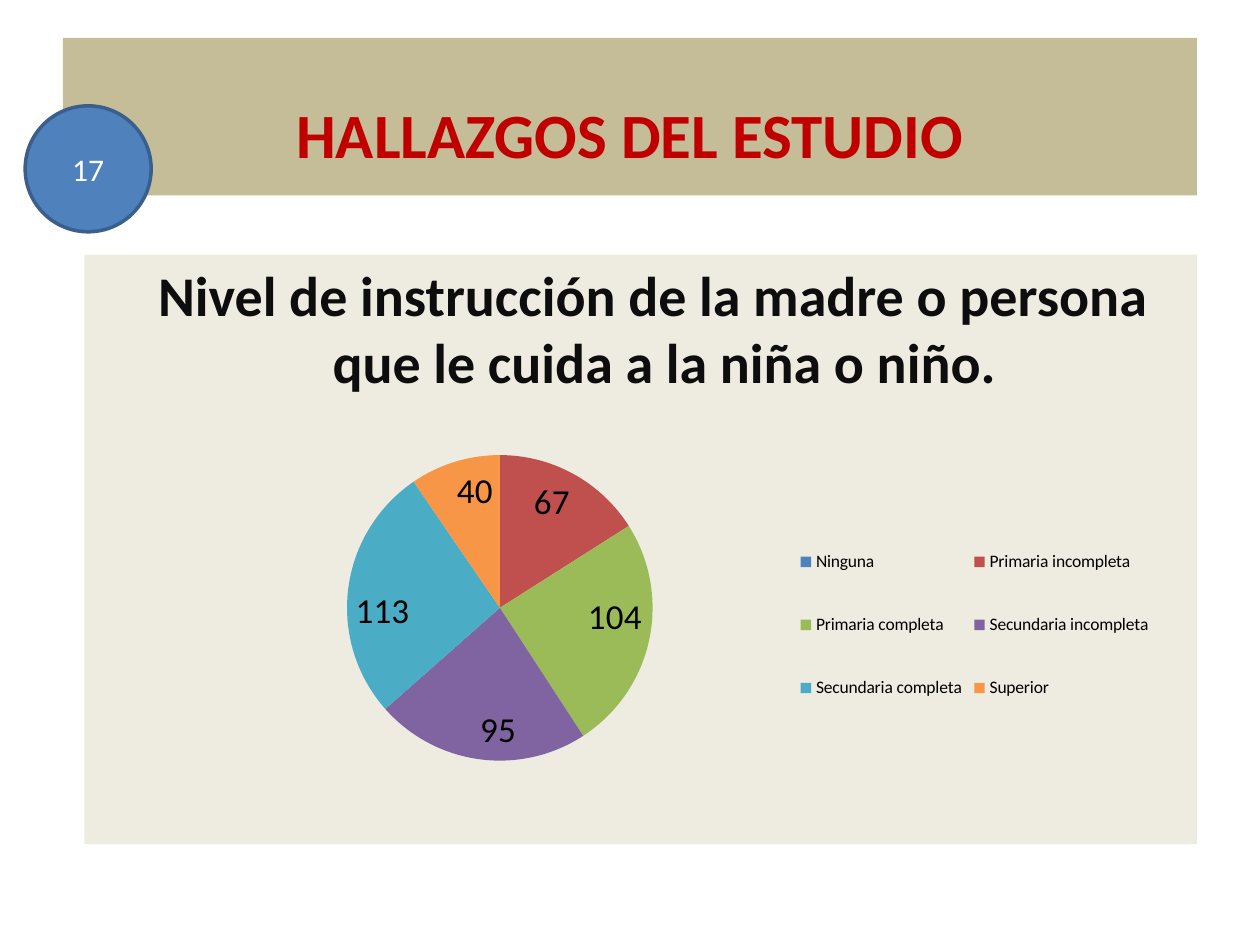
"""Build the slide on the schooling of mothers and carers."""
from dataclasses import dataclass
from typing import Optional

from lxml.etree import SubElement
from pptx import Presentation
from pptx.chart.data import CategoryChartData
from pptx.dml.color import RGBColor
from pptx.enum.chart import XL_CHART_TYPE, XL_LABEL_POSITION, XL_LEGEND_POSITION
from pptx.enum.shapes import MSO_SHAPE
from pptx.enum.text import MSO_ANCHOR, PP_ALIGN
from pptx.oxml.ns import qn
from pptx.util import Inches, Pt

FONT = "Calibri"
COLORS = {
    "banner": "C4BD97", "title": "C00000", "panel": "EEECE1", "heading": "0D0D0D",
    "badge": "4F81BD", "badge_line": "3A5F8C", "white": "FFFFFF", "black": "000000",
}


@dataclass
class Block:
    kind: MSO_SHAPE
    box: tuple[float, float, float, float]
    fill: str
    text: str
    size: float
    color: str
    bold: bool = False
    anchor: MSO_ANCHOR = MSO_ANCHOR.MIDDLE
    top: float = 0.05
    line: Optional[str] = None


@dataclass
class Level:
    name: str
    count: int
    color: str


BLOCKS = [
    Block(MSO_SHAPE.RECTANGLE, (0.5, 0.3, 9, 1.25), "banner",
          "HALLAZGOS DEL ESTUDIO", 36, "title", True, top=0.31),
    Block(MSO_SHAPE.OVAL, (0.2, 0.84, 1, 1), "badge", "17", 18, "white", line="badge_line"),
    Block(MSO_SHAPE.RECTANGLE, (0.67, 2.02, 8.83, 4.68), "panel",
          "Nivel de instrucción de la madre o persona que le cuida a la niña o niño.",
          32, "heading", True, MSO_ANCHOR.TOP),
]
LEVELS = [
    Level("Ninguna", 0, "4F81BD"),
    Level("Primaria incompleta", 67, "C0504D"),
    Level("Primaria completa", 104, "9BBB59"),
    Level("Secundaria incompleta", 95, "8064A2"),
    Level("Secundaria completa", 113, "4BACC6"),
    Level("Superior", 40, "F79646"),
]


def rgb(name: str) -> RGBColor:
    """Return the named colour."""
    return RGBColor.from_string(COLORS[name])


def add_block(s, block: Block):
    """Draw a filled shape with centred text."""
    sp = s.shapes.add_shape(block.kind, *map(Inches, block.box))
    sp.shadow.inherit = False
    sp.fill.solid()
    sp.fill.fore_color.rgb = rgb(block.fill)
    if block.line:
        sp.line.color.rgb = rgb(block.line)
        sp.line.width = Pt(2)
    else:
        sp.line.fill.background()
    tf = sp.text_frame
    tf.text = block.text
    tf.word_wrap = True
    tf.vertical_anchor = block.anchor
    tf.margin_top = Inches(block.top)
    p = tf.paragraphs[0]
    p.alignment = PP_ALIGN.CENTER
    font = p.runs[0].font
    font.name, font.size, font.bold = FONT, Pt(block.size), block.bold
    font.color.rgb = rgb(block.color)
    return sp


def set_indent(p, left: float, first: float) -> None:
    """Set the left margin and first-line indent of a paragraph."""
    pPr = p._p.get_or_add_pPr()
    pPr.set("marL", str(Inches(left)))
    pPr.set("indent", str(Inches(first)))


def set_layout(parent, index: int, box: tuple[float, ...], inner: bool = False) -> None:
    """Place a chart part by fractions of the chart area."""
    for old in parent.findall(qn("c:layout")):
        parent.remove(old)
    layout = SubElement(parent, qn("c:layout"))
    parent.insert(index, layout)
    manual = SubElement(layout, qn("c:manualLayout"))
    settings = [("layoutTarget", "inner")] if inner else []
    settings += [("xMode", "edge"), ("yMode", "edge")]
    settings += list(zip("xywh", map(str, box)))
    for tag, value in settings:
        SubElement(manual, qn(f"c:{tag}")).set("val", value)


def add_pie(s, levels: list[Level]) -> None:
    """Draw the pie of schooling levels with its legend."""
    data = CategoryChartData()
    data.categories = [level.name for level in levels]
    data.add_series("Series 1", [level.count for level in levels])
    box = map(Inches, (1.06, 2.65, 8.19, 3.85))
    chart = s.shapes.add_chart(XL_CHART_TYPE.PIE, *box, data).chart
    chart.has_title = False
    chart.font.name, chart.font.size = FONT, Pt(10)
    chart.font.color.rgb = rgb("black")
    chart.has_legend = True
    chart.legend.position = XL_LEGEND_POSITION.RIGHT
    chart.legend.include_in_layout = False
    set_layout(chart.legend._element, 1, (0.64, 0.36, 0.35, 0.48))
    plot = chart.plots[0]
    plot.vary_by_categories = True
    set_layout(plot._element.getparent(), 0, (0.09, 0.25, 0.53, 0.63), inner=True)
    plot.has_data_labels = True
    labels = plot.data_labels
    labels.show_value = True
    labels.show_percentage = False
    labels.number_format, labels.number_format_is_linked = "#", False
    labels.position = XL_LABEL_POSITION.INSIDE_END
    labels.font.name, labels.font.size = FONT, Pt(20)
    labels.font.color.rgb = rgb("black")
    for i, level in enumerate(levels):
        fill = plot.series[0].points[i].format.fill
        fill.solid()
        fill.fore_color.rgb = RGBColor.from_string(level.color)


def main() -> None:
    """Build and save the slide."""
    prs = Presentation()
    prs.slide_width, prs.slide_height = Inches(10), Inches(7.5)
    s = prs.slides.add_slide(prs.slide_layouts[6])
    banner, badge, panel = [add_block(s, block) for block in BLOCKS]
    set_indent(panel.text_frame.paragraphs[0], 0.38, -0.18)
    add_pie(s, LEVELS)
    prs.save("out.pptx")


if __name__ == "__main__":
    main()
